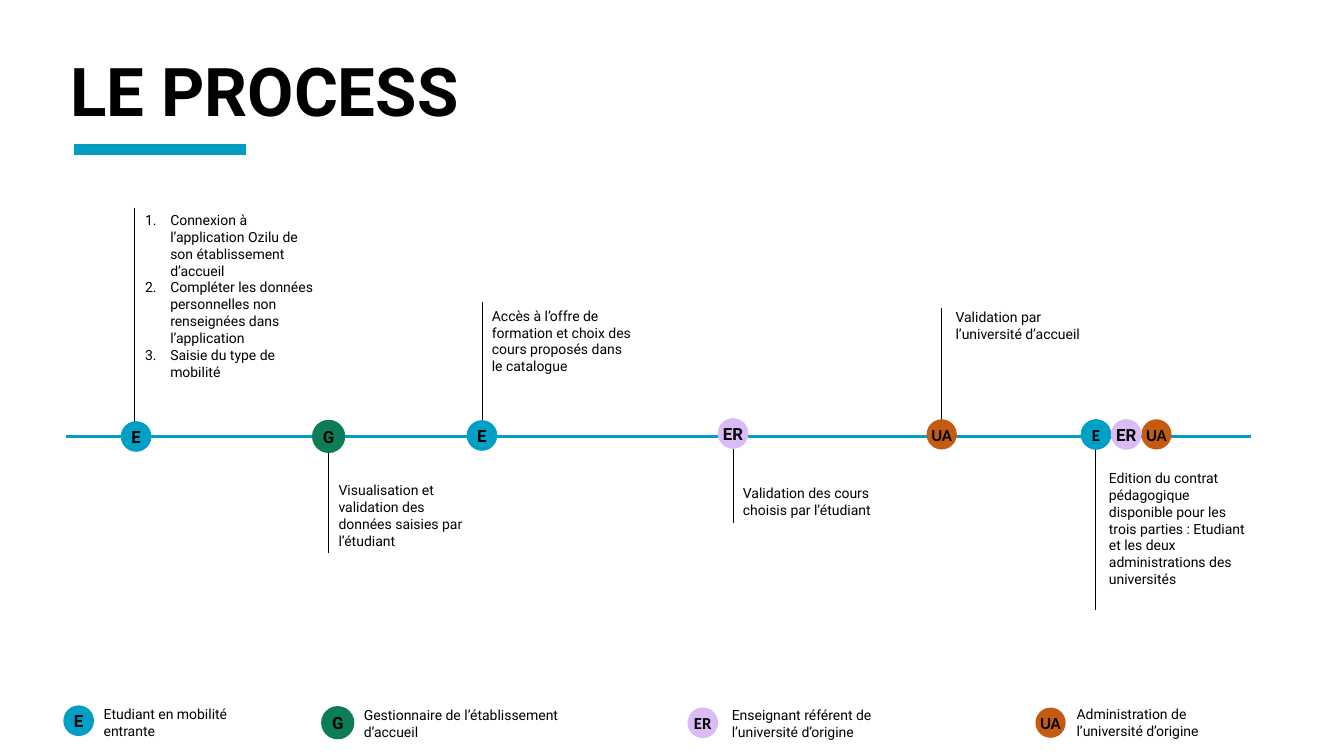
from dataclasses import dataclass

import pptx
import pptx.dml.color
import pptx.enum.shapes
import pptx.enum.text
import pptx.oxml.ns
import pptx.util
from lxml import etree
from pptx.util import Inches


@dataclass(frozen=True)
class Theme:
    ink: str = "000000"
    accent: str = "009FC5"
    title_bar: str = "039DC1"
    font: str = "Roboto"
    alt_font: str = "Calibri"
    title_size: int = 48
    badge_size: int = 12
    caption_size: int = 10
    stem_width: float = 0.5
    axis_width: float = 2.25
    bar_width: float = 8


THEME = Theme()
AXIS_Y = 4.33

# code: (fill, diameter, outlined)
ROLES = {
    "E": (THEME.accent, 0.29, True),
    "G": ("0C7C59", 0.33, False),
    "ER": ("DBBBF5", 0.29, True),
    "UA": ("C55A11", 0.3, False),
}

# x, top and bottom of each stem
STEMS = [
    (1.33, 2.06, 4.19),
    (3.26, 4.49, 5.49),
    (4.78, 3.0, 4.19),
    (7.27, 4.45, 5.19),
    (9.34, 3.06, 4.17),
    (10.86, 4.45, 6.05),
]

# caption box (left, top, width, height) and its paragraphs
STEPS = [
    ((1.34, 2.05, 1.89, 1.78), [
        "Connexion à l’application Ozilu de son établissement d’accueil",
        "Compléter les données personnelles non renseignées dans l’application",
        "Saisie du type de mobilité",
    ]),
    ((3.26, 4.73, 1.55, 0.77), ["Visualisation et validation des données saisies par l’étudiant"]),
    ((4.78, 3.0, 1.58, 0.77),
     ["Accès à l’offre de formation et choix des cours proposés dans le catalogue"]),
    ((7.27, 4.76, 1.55, 0.44), ["Validation des cours choisis par l’étudiant"]),
    ((9.38, 3.01, 1.5, 0.44), ["Validation par l’université d’accueil"]),
    ((10.9, 4.61, 1.55, 1.28), [
        "Edition du contrat pédagogique disponible pour les trois parties : "
        "Etudiant et les deux administrations des universités",
    ]),
]

# role, centre x, centre y, font
STEP_BADGES = [
    ("E", 1.35, 4.33, THEME.font),
    ("G", 3.26, 4.33, THEME.font),
    ("E", 4.78, 4.32, THEME.font),
    ("ER", 7.27, 4.3, THEME.font),
    ("UA", 9.34, 4.31, THEME.alt_font),
    ("E", 10.87, 4.31, THEME.alt_font),
    ("UA", 11.47, 4.31, THEME.alt_font),
    ("ER", 11.17, 4.31, THEME.font),
]

# role, badge centre, font, caption box, meaning
LEGEND = [
    ("E", 0.78, 7.15, THEME.font, (0.93, 6.95, 1.74, 0.44), "Etudiant en mobilité entrante"),
    ("G", 3.35, 7.17, THEME.font, (3.51, 6.96, 2.41, 0.44),
     "Gestionnaire de l’établissement d’accueil"),
    ("ER", 6.97, 7.17, THEME.alt_font, (7.16, 6.96, 1.67, 0.44),
     "Enseignant référent de l’université d’origine"),
    ("UA", 10.42, 7.17, THEME.alt_font, (10.58, 6.95, 1.94, 0.44),
     "Administration de l’université d’origine"),
]


def rgb(value):
    return pptx.dml.color.RGBColor.from_string(value)


def set_all(target, values):
    for name, value in values.items():
        setattr(target, name, value)


def write(paragraph, text, size, font=THEME.font, bold=False):
    run = paragraph.add_run()
    run.text = text
    set_all(run.font, {"name": font, "size": pptx.util.Pt(size), "bold": bold})
    run.font.color.rgb = rgb(THEME.ink)


def number(paragraph):
    """Turn a paragraph into an item of a numbered list."""
    properties = paragraph._p.get_or_add_pPr()
    properties.set("marL", str(Inches(0.25)))
    properties.set("indent", str(Inches(-0.25)))
    etree.SubElement(properties, pptx.oxml.ns.qn("a:buAutoNum"), type="arabicPeriod")


def add_title(slide, text):
    title = slide.shapes.title
    set_all(title, {"left": Inches(0.6), "top": Inches(0.44),
                    "width": Inches(5.54), "height": Inches(0.91)})
    frame = title.text_frame
    set_all(frame, {"word_wrap": True,
                    "auto_size": pptx.enum.text.MSO_AUTO_SIZE.NONE,
                    "vertical_anchor": pptx.enum.text.MSO_ANCHOR.TOP})
    paragraph = frame.paragraphs[0]
    paragraph.alignment = pptx.enum.text.PP_ALIGN.LEFT
    write(paragraph, text, THEME.title_size, bold=True)


def add_line(slide, start, end, color, width):
    line = slide.shapes.add_connector(
        pptx.enum.shapes.MSO_CONNECTOR.STRAIGHT, *map(Inches, start + end))
    line.line.color.rgb = rgb(color)
    line.line.width = pptx.util.Pt(width)
    etree.SubElement(line._element.spPr, pptx.oxml.ns.qn("a:effectLst"))


def add_caption(slide, box, items):
    """Add a text box; several items become a numbered list."""
    frame = slide.shapes.add_textbox(*map(Inches, box)).text_frame
    frame.word_wrap = True
    for index, item in enumerate(items):
        paragraph = frame.add_paragraph() if index else frame.paragraphs[0]
        if len(items) > 1:
            number(paragraph)
        write(paragraph, item, THEME.caption_size)


def add_badge(slide, role, x, y, font):
    color, diameter, outlined = ROLES[role]
    badge = slide.shapes.add_shape(
        pptx.enum.shapes.MSO_SHAPE.OVAL, Inches(x - diameter / 2),
        Inches(y - diameter / 2), Inches(diameter), Inches(diameter))
    badge.shadow.inherit = False
    badge.fill.solid()
    badge.fill.fore_color.rgb = rgb(color)
    if outlined:
        badge.line.color.rgb = rgb(color)
        badge.line.width = pptx.util.Pt(1)
    else:
        badge.line.fill.background()
    frame = badge.text_frame
    set_all(frame, {"margin_left": 0, "margin_right": 0, "margin_top": 0,
                    "margin_bottom": 0, "word_wrap": False,
                    "vertical_anchor": pptx.enum.text.MSO_ANCHOR.MIDDLE})
    frame.paragraphs[0].alignment = pptx.enum.text.PP_ALIGN.CENTER
    write(frame.paragraphs[0], role, THEME.badge_size, font, bold=True)


def main():
    deck = pptx.Presentation()
    set_all(deck, {"slide_width": Inches(13.33), "slide_height": Inches(7.5)})
    slide = deck.slides.add_slide(deck.slide_layouts.get_by_name("Title Only"))

    add_title(slide, "LE PROCESS")
    add_line(slide, (0.73, 1.48), (2.44, 1.48), THEME.title_bar, THEME.bar_width)

    for x, top, bottom in STEMS:
        add_line(slide, (x, top), (x, bottom), THEME.ink, THEME.stem_width)
    add_line(slide, (0.65, AXIS_Y), (12.41, AXIS_Y), THEME.accent, THEME.axis_width)
    for box, items in STEPS:
        add_caption(slide, box, items)
    for badge in STEP_BADGES:
        add_badge(slide, *badge)

    for role, x, y, font, box, meaning in LEGEND:
        add_badge(slide, role, x, y, font)
        add_caption(slide, box, [meaning])

    deck.save("out.pptx")


if __name__ == "__main__":
    main()
